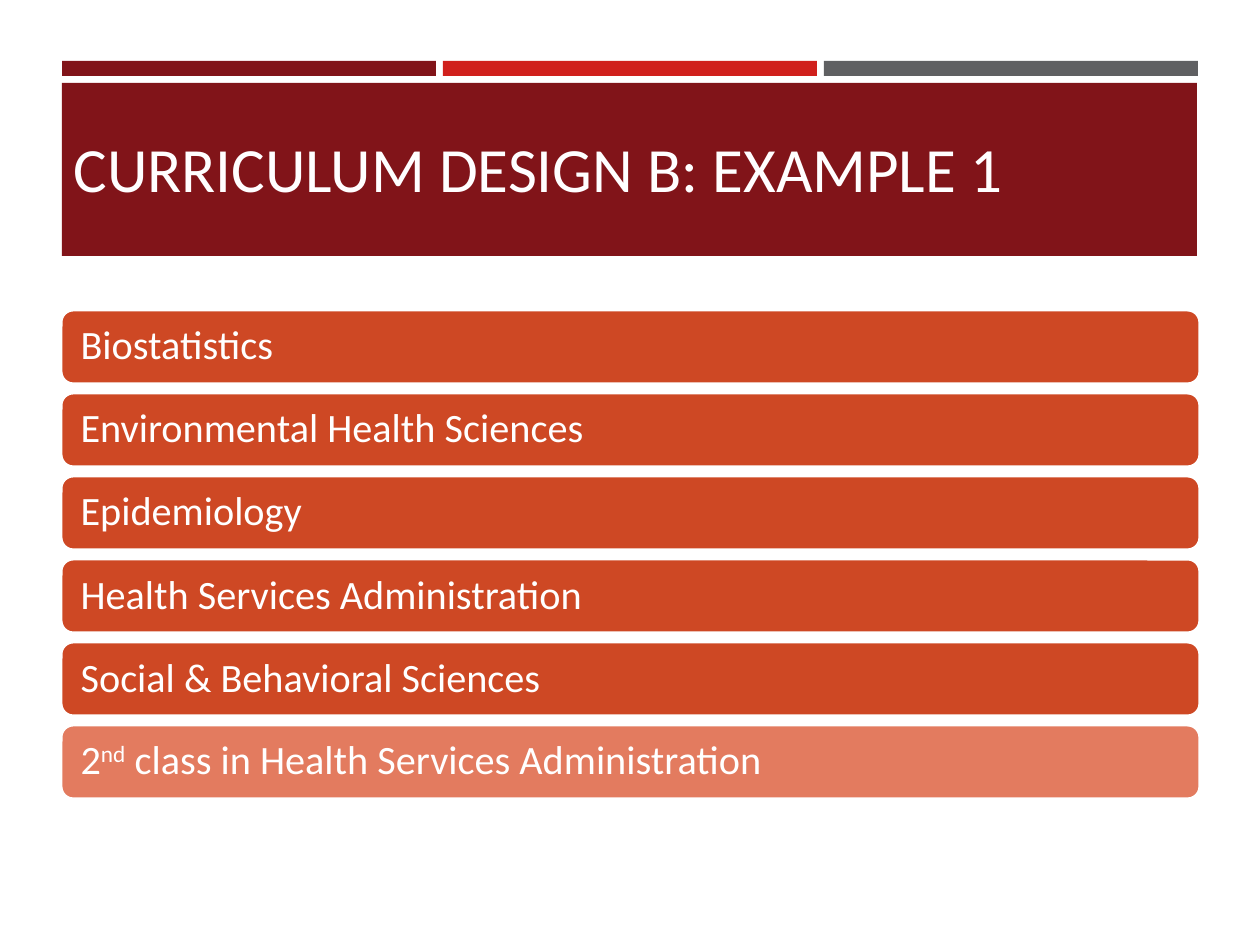
from pptx import Presentation
from pptx.dml.color import RGBColor
from pptx.enum.shapes import MSO_SHAPE as Shape
from pptx.enum.text import MSO_ANCHOR as Anchor, MSO_AUTO_SIZE as AutoSize, PP_ALIGN as Align
from pptx.util import Pt

PX = 914400 // 126

MAROON = RGBColor(0x81, 0x14, 0x19)
RED = RGBColor(0xD0, 0x20, 0x1C)
GRAY = RGBColor(0x5F, 0x60, 0x62)
ORANGE = RGBColor(0xCE, 0x48, 0x24)
LIGHT_ORANGE = RGBColor(0xE3, 0x7B, 0x5F)
WHITE = RGBColor(0xFF, 0xFF, 0xFF)
TITLE_WHITE = RGBColor(0xFF, 0xFE, 0xFF)

TITLE = "CURRICULUM DESIGN B: EXAMPLE 1"
STRIPES = [MAROON, RED, GRAY]
COURSES = [
    (["Biostatistics"], ORANGE),
    (["Environmental Health Sciences"], ORANGE),
    (["Epidemiology"], ORANGE),
    (["Health Services Administration"], ORANGE),
    (["Social & Behavioral Sciences"], ORANGE),
    (["2", "nd", " class in Health Services Administration"], LIGHT_ORANGE),
]
SUPERSCRIPT = "nd"

STRIPE_LEFT, STRIPE_TOP, STRIPE_WIDTH, STRIPE_HEIGHT, STRIPE_PITCH = 62, 61, 374, 15, 381
BANNER = (62, 83, 1135, 173)
TITLE_BOX = (61, 97, 1140, 140)
ROW_LEFT, ROW_TOP, ROW_WIDTH, ROW_HEIGHT, ROW_PITCH = 61, 310, 1139, 74, 83


def add_block(slide, kind, box, color):
    shape = slide.shapes.add_shape(kind, *(value * PX for value in box))
    shape.shadow.inherit = False
    shape.fill.solid()
    shape.fill.fore_color.rgb = color
    shape.line.fill.background()
    return shape


def format_font(font, size, color):
    font.name = "Calibri"
    font.size = Pt(size)
    font.color.rgb = color


def add_banner(slide):
    for index, color in enumerate(STRIPES):
        left = STRIPE_LEFT + index * STRIPE_PITCH
        add_block(slide, Shape.RECTANGLE, (left, STRIPE_TOP, STRIPE_WIDTH, STRIPE_HEIGHT), color)
    add_block(slide, Shape.RECTANGLE, BANNER, MAROON)


def add_title(slide):
    title = slide.shapes.title
    title.left, title.top, title.width, title.height = (value * PX for value in TITLE_BOX)
    frame = title.text_frame
    frame.text = TITLE
    frame.auto_size = AutoSize.NONE
    frame.vertical_anchor = Anchor.MIDDLE
    paragraph = frame.paragraphs[0]
    paragraph.alignment = Align.LEFT
    format_font(paragraph.runs[0].font, 36, TITLE_WHITE)
    tree = slide.shapes._spTree
    tree.remove(title._element)
    tree.append(title._element)


def add_course(slide, index, parts, color):
    box = (ROW_LEFT, ROW_TOP + index * ROW_PITCH, ROW_WIDTH, ROW_HEIGHT)
    shape = add_block(slide, Shape.ROUNDED_RECTANGLE, box, color)
    shape.line.color.rgb = WHITE
    shape.line.width = Pt(1.75)
    frame = shape.text_frame
    frame.word_wrap = True
    frame.vertical_anchor = Anchor.MIDDLE
    frame.margin_left = frame.margin_right = 16 * PX
    paragraph = frame.paragraphs[0]
    paragraph.alignment = Align.LEFT
    paragraph.line_spacing = 0.9
    for part in parts:
        run = paragraph.add_run()
        run.text = part
        format_font(run.font, 23, WHITE)
        if part == SUPERSCRIPT:
            run.font._element.set("baseline", "30000")


def main():
    presentation = Presentation()
    presentation.slide_width, presentation.slide_height = 1260 * PX, 945 * PX
    slide = presentation.slides.add_slide(presentation.slide_layouts[5])
    add_banner(slide)
    add_title(slide)
    for index, (parts, color) in enumerate(COURSES):
        add_course(slide, index, parts, color)
    presentation.save("out.pptx")


if __name__ == "__main__":
    main()
